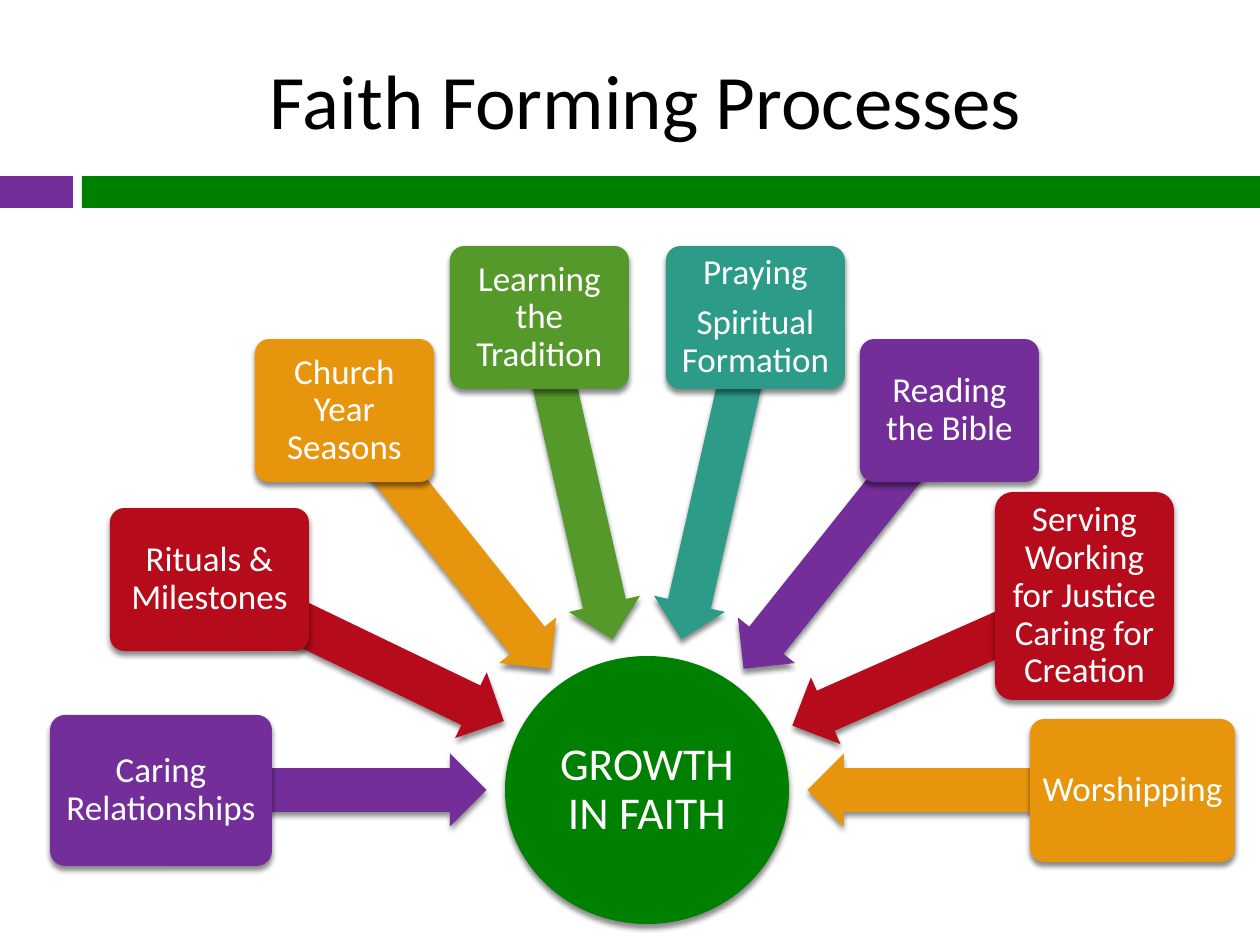
from dataclasses import dataclass
from math import cos, radians, sin

from lxml.etree import SubElement
from pptx import Presentation
from pptx.dml.color import RGBColor
from pptx.enum.shapes import MSO_SHAPE as Shape
from pptx.enum.text import MSO_ANCHOR as Anchor, PP_ALIGN as Align
from pptx.oxml.ns import qn
from pptx.util import Pt

SCALE = 914400 / 126
FONT = "Calibri"
BLACK = RGBColor(0x00, 0x00, 0x00)
WHITE = RGBColor(0xFF, 0xFF, 0xFF)
PURPLE = RGBColor(0x73, 0x2E, 0x9A)
GREEN = RGBColor(0x00, 0x80, 0x00)
RED = RGBColor(0xB5, 0x0B, 0x1B)
ORANGE = RGBColor(0xE8, 0x95, 0x0E)
LEAF = RGBColor(0x55, 0x99, 0x2B)
TEAL = RGBColor(0x2C, 0x9C, 0x89)


@dataclass
class Process:
    """A card around the hub and the arrow that leads inward from it."""
    lines: list
    color: RGBColor
    card: tuple
    angle: float
    reach: int
    length: int


STEP = 180 / 7
HUB = (505, 656, 284, 268)
PROCESSES = [
    Process(["Caring Relationships"], PURPLE, (50, 715, 222, 151), 180, 323, 325),
    Process(["Rituals & Milestones"], RED, (110, 508, 199, 143), 180 + STEP, 322, 326),
    Process(["Church Year Seasons"], ORANGE, (255, 339, 179, 143), 180 + 2 * STEP, 320, 330),
    Process(["Learning the Tradition"], LEAF, (450, 246, 179, 143), 180 + 3 * STEP, 320, 331),
    Process(["Praying", "Spiritual Formation"], TEAL, (666, 246, 179, 143), 180 + 4 * STEP, 320, 331),
    Process(["Reading the Bible"], PURPLE, (860, 339, 179, 143), 180 + 5 * STEP, 320, 330),
    Process(["Serving Working for Justice Caring for Creation"], RED,
            (995, 492, 179, 208), 336.1, 319, 320),
    Process(["Worshipping"], ORANGE, (1030, 719, 205, 143), 0, 323, 325),
]


def px(length):
    """Turn pixels into EMU."""
    return round(length * SCALE)


def add_shadow(shape):
    """Give a shape a soft shadow that falls straight down."""
    effects = SubElement(shape._element.spPr, qn("a:effectLst"))
    shadow = SubElement(effects, qn("a:outerShdw"), blurRad=str(Pt(3)),
                        dist=str(Pt(2.4)), dir="5400000", rotWithShape="0")
    color = SubElement(shadow, qn("a:srgbClr"), val="000000")
    SubElement(color, qn("a:alpha"), val="45000")


def add_block(page, kind, box, color, shadow=True):
    """Add a filled preset shape without an outline."""
    shape = page.shapes.add_shape(kind, *map(px, box))
    shape.fill.solid()
    shape.fill.fore_color.rgb = color
    shape.line.fill.background()
    if shadow:
        add_shadow(shape)
    else:
        shape.shadow.inherit = False
    return shape


def write(shape, lines, size, color, inset):
    """Write centred paragraphs into a shape."""
    frame = shape.text_frame
    frame.word_wrap = True
    frame.vertical_anchor = Anchor.MIDDLE
    frame.margin_left = frame.margin_right = px(inset)
    frame.margin_top = frame.margin_bottom = px(inset)
    frame.text = "\n".join(lines)
    for para in frame.paragraphs:
        para.alignment = Align.CENTER
        para.font.name = FONT
        para.font.size = Pt(size)
        para.font.color.rgb = color
    return frame


def write_label(shape, lines, size, inset):
    """Write a tightly spaced white label into a shape."""
    for para in write(shape, lines, size, WHITE, inset).paragraphs:
        para.line_spacing = 0.9
        para.space_after = Pt(size * 0.35)


def add_header(page, box):
    """Add the title and the two-part band below it."""
    left, top, width, height = box
    title = page.shapes.add_textbox(*map(px, (left + 84, top + 31, 1124, 136)))
    write(title, ["Faith Forming Processes"], 44, BLACK, 6)
    band_top, band_height = top + height - 32, 32
    add_block(page, Shape.RECTANGLE, (left, band_top, 73, band_height), PURPLE, False)
    add_block(page, Shape.RECTANGLE, (left + 82, band_top, width - 82, band_height),
              GREEN, False)


def add_hub(page, box):
    """Add the central circle."""
    hub = add_block(page, Shape.OVAL, box, GREEN)
    write_label(hub, ["GROWTH IN FAITH"], 26, 2)


def add_process(page, process, hub):
    """Add one arrow pointing at the hub and the card that covers its tail."""
    left, top, width, height = hub
    turn = radians(process.angle)
    center_x = left + width / 2 + process.reach * cos(turn)
    center_y = top + height / 2 + process.reach * sin(turn)
    thickness = 73
    arrow = add_block(page, Shape.LEFT_ARROW,
                      (center_x - process.length / 2, center_y - thickness / 2,
                       process.length, thickness), process.color)
    arrow.adjustments[0] = 0.6
    arrow.adjustments[1] = 0.5
    arrow.rotation = process.angle
    card = add_block(page, Shape.ROUNDED_RECTANGLE, process.card, process.color)
    card.adjustments[0] = 0.1
    write_label(card, process.lines, 20, 5)


def main():
    """Build and save the slide."""
    deck = Presentation()
    deck.slide_width, deck.slide_height = px(1260), px(945)
    page = deck.slides.add_slide(deck.slide_layouts[6])
    add_header(page, (0, 0, 1260, 208))
    add_hub(page, HUB)
    for process in PROCESSES:
        add_process(page, process, HUB)
    deck.save("out.pptx")


if __name__ == "__main__":
    main()
